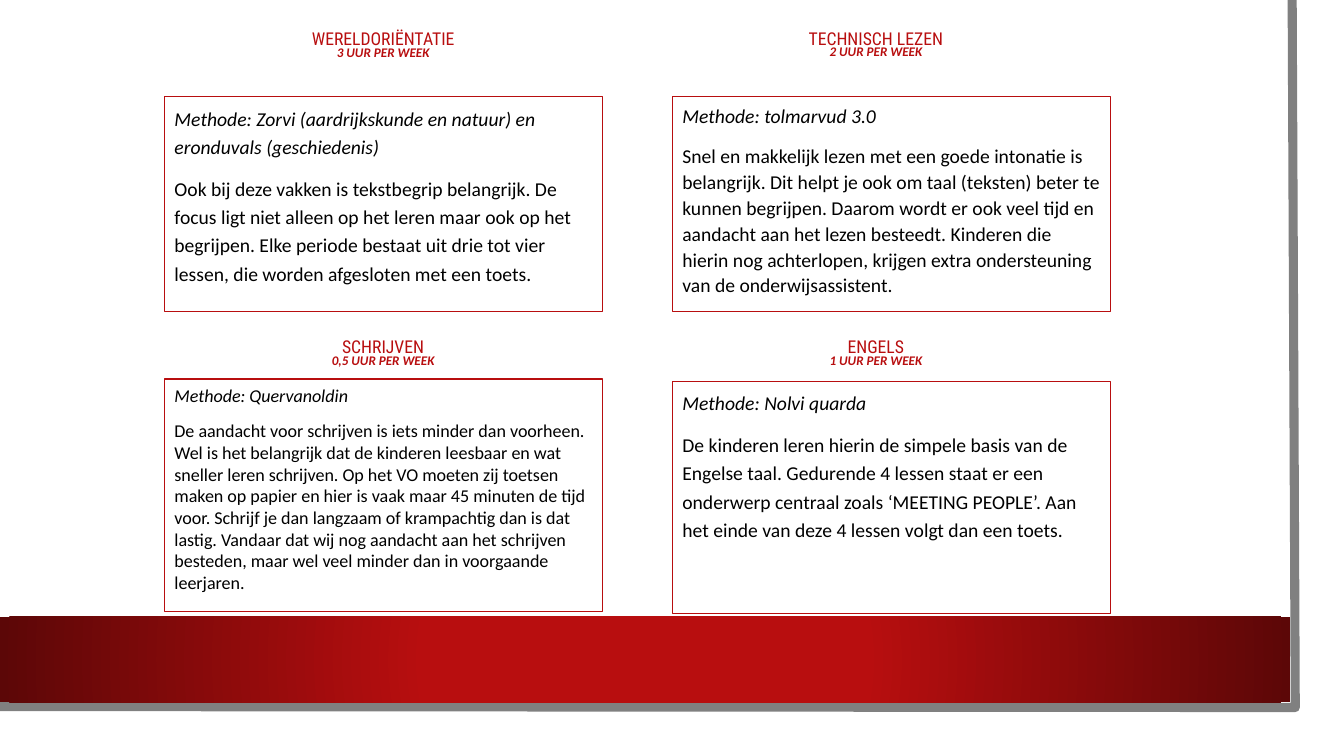
from dataclasses import dataclass

from lxml.etree import SubElement
from pptx import Presentation
from pptx.dml.color import RGBColor
from pptx.enum.shapes import MSO_SHAPE
from pptx.enum.text import MSO_ANCHOR, MSO_AUTO_SIZE, PP_ALIGN
from pptx.oxml.ns import qn
from pptx.util import Pt


@dataclass(frozen=True)
class Theme:
    """Colours, fonts and type sizes of the slide."""

    red: RGBColor = RGBColor(0xB8, 0x0E, 0x0F)
    dark_red: RGBColor = RGBColor(0x5C, 0x07, 0x07)
    grey: RGBColor = RGBColor(0x80, 0x80, 0x80)
    black: RGBColor = RGBColor(0, 0, 0)
    white: RGBColor = RGBColor(255, 255, 255)
    heading_font: str = "Roboto Condensed"
    body_font: str = "Calibri"
    heading_size: float = 12.6
    hours_size: float = 9.4
    body_size: float = 14
    small_body_size: float = 12.9


@dataclass(frozen=True)
class Subject:
    """One school subject with its hours, method and description."""

    name: str
    hours: str
    method: str
    description: str
    card_top: float
    size: float
    line_spacing: float


THEME = Theme()
HEADING_LEFTS = (193, 545)
HEADING_TOPS = (20.2, 240.5)
CARD_LEFTS = (117.4, 480.2)
CARD_HEIGHTS = (153.4, 166.3)

SUBJECTS = (
    Subject(
        "WERELDORIËNTATIE", "3 UUR PER WEEK",
        "Methode: Zorvi (aardrijkskunde en natuur) en eronduvals (geschiedenis)",
        "Ook bij deze vakken is tekstbegrip belangrijk. De focus ligt niet alleen op het "
        "leren maar ook op het begrijpen. Elke periode bestaat uit drie tot vier lessen, "
        "die worden afgesloten met een toets.",
        69.1, THEME.body_size, 1.2),
    Subject(
        "TECHNISCH LEZEN", "2 UUR PER WEEK",
        "Methode: tolmarvud 3.0",
        "Snel en makkelijk lezen met een goede intonatie is belangrijk. Dit helpt je ook om "
        "taal (teksten) beter te kunnen begrijpen. Daarom wordt er ook veel tijd en aandacht "
        "aan het lezen besteedt. Kinderen die hierin nog achterlopen, krijgen extra "
        "ondersteuning van de onderwijsassistent.",
        69.1, THEME.body_size, 1.1),
    Subject(
        "SCHRIJVEN", "0,5 UUR PER WEEK",
        "Methode: Quervanoldin",
        "De aandacht voor schrijven is iets minder dan voorheen. Wel is het belangrijk dat de "
        "kinderen leesbaar en wat sneller leren schrijven. Op het VO moeten zij toetsen maken "
        "op papier en hier is vaak maar 45 minuten de tijd voor. Schrijf je dan langzaam of "
        "krampachtig dan is dat lastig. Vandaar dat wij nog aandacht aan het schrijven "
        "besteden, maar wel veel minder dan in voorgaande leerjaren.",
        270.7, THEME.small_body_size, 1.0),
    Subject(
        "ENGELS", "1 UUR PER WEEK",
        "Methode: Nolvi quarda",
        "De kinderen leren hierin de simpele basis van de Engelse taal. Gedurende 4 lessen "
        "staat er een onderwerp centraal zoals ‘MEETING PEOPLE’. Aan het einde van deze 4 "
        "lessen volgt dan een toets.",
        272.2, THEME.body_size, 1.2),
)


def add_span(para, text, font, size, color, bold=False, italic=False):
    """Add one formatted run to a paragraph."""
    span = para.add_run()
    span.text = text
    span.font.name = font
    span.font.size = Pt(size)
    span.font.color.rgb = color
    span.font.bold = bold
    span.font.italic = italic


def place(page, box, left, top, width, height):
    """Move a box to its place in front and prepare its text frame."""
    page.shapes._spTree.append(box._element)
    box.left, box.top = Pt(left), Pt(top)
    box.width, box.height = Pt(width), Pt(height)
    frame = box.text_frame
    frame.word_wrap = True
    frame.auto_size = MSO_AUTO_SIZE.NONE
    frame.vertical_anchor = MSO_ANCHOR.TOP
    return frame


def add_rectangle(page, left, top, width, height):
    """Add a plain rectangle without line or shadow."""
    box = page.shapes.add_shape(
        MSO_SHAPE.RECTANGLE, Pt(left), Pt(top), Pt(width), Pt(height))
    box.shadow.inherit = False
    box.line.fill.background()
    return box


def fill_radial(box, inner, outer, start):
    """Fill a shape with a gradient running outward from its centre."""
    box.fill.gradient()
    for stop, color, position in zip(box.fill.gradient_stops, (inner, outer), (start, 1)):
        stop.color.rgb = color
        stop.position = position
    gradient = box._element.spPr.find(qn("a:gradFill"))
    gradient.remove(gradient.find(qn("a:lin")))
    path = SubElement(gradient, qn("a:path"), {"path": "circle"})
    SubElement(path, qn("a:fillToRect"), dict.fromkeys("ltrb", "50000"))


def add_backdrop(page):
    """Draw the sheet, its grey edge and the red band."""
    sheet = add_rectangle(page, 0, 0, 943.2, 523.4)
    sheet.fill.solid()
    sheet.fill.fore_color.rgb = THEME.white
    builder = page.shapes.build_freeform(Pt(923), Pt(0))
    builder.add_line_segments([(Pt(925.2), Pt(505.4)), (Pt(0), Pt(504.7))], close=False)
    edge = builder.convert_to_shape()
    edge.shadow.inherit = False
    edge.fill.background()
    edge.line.color.rgb = THEME.grey
    edge.line.width = Pt(6.5)
    fill_radial(add_rectangle(page, 0, 440.6, 921.6, 61.2), THEME.red, THEME.dark_red, 0.34)


def add_heading(page, box, subject, left, top):
    """Write a subject name with its weekly hours below it."""
    para = place(page, box, left, top, 161.3, 49).paragraphs[0]
    para.alignment = PP_ALIGN.CENTER
    para.line_spacing = 0.7
    add_span(para, subject.name, THEME.heading_font, THEME.heading_size, THEME.red)
    para.add_line_break()
    add_span(para, subject.hours, THEME.body_font, THEME.hours_size, THEME.red, True, True)


def add_card(page, box, subject, left, height):
    """Write the method and description in a red outlined box."""
    frame = place(page, box, left, subject.card_top, 313.2, height)
    box.line.color.rgb = THEME.red
    box.line.width = Pt(0.75)
    for index, text in enumerate((subject.method, subject.description)):
        para = frame.add_paragraph() if index else frame.paragraphs[0]
        properties = para._p.get_or_add_pPr()
        properties.set("marL", "0")
        properties.set("indent", "0")
        SubElement(properties, qn("a:buNone"))
        para.alignment = PP_ALIGN.LEFT
        para.line_spacing = subject.line_spacing
        para.space_before = Pt(10 * index)
        add_span(para, text, THEME.body_font, subject.size, THEME.black, italic=index == 0)


def main():
    """Build the slide and save it."""
    deck = Presentation()
    deck.slide_width, deck.slide_height = Pt(960), Pt(540)
    page = deck.slides.add_slide(deck.slide_layouts.get_by_name("Comparison"))
    title, *bodies = list(page.placeholders)[:5]
    add_backdrop(page)
    for index, (subject, body) in enumerate(zip(SUBJECTS, bodies)):
        row, column = divmod(index, 2)
        heading = page.shapes.add_textbox(0, 0, 0, 0) if index else title
        add_heading(page, heading, subject, HEADING_LEFTS[column], HEADING_TOPS[row])
        add_card(page, body, subject, CARD_LEFTS[column], CARD_HEIGHTS[row])
    deck.save("out.pptx")


if __name__ == "__main__":
    main()
